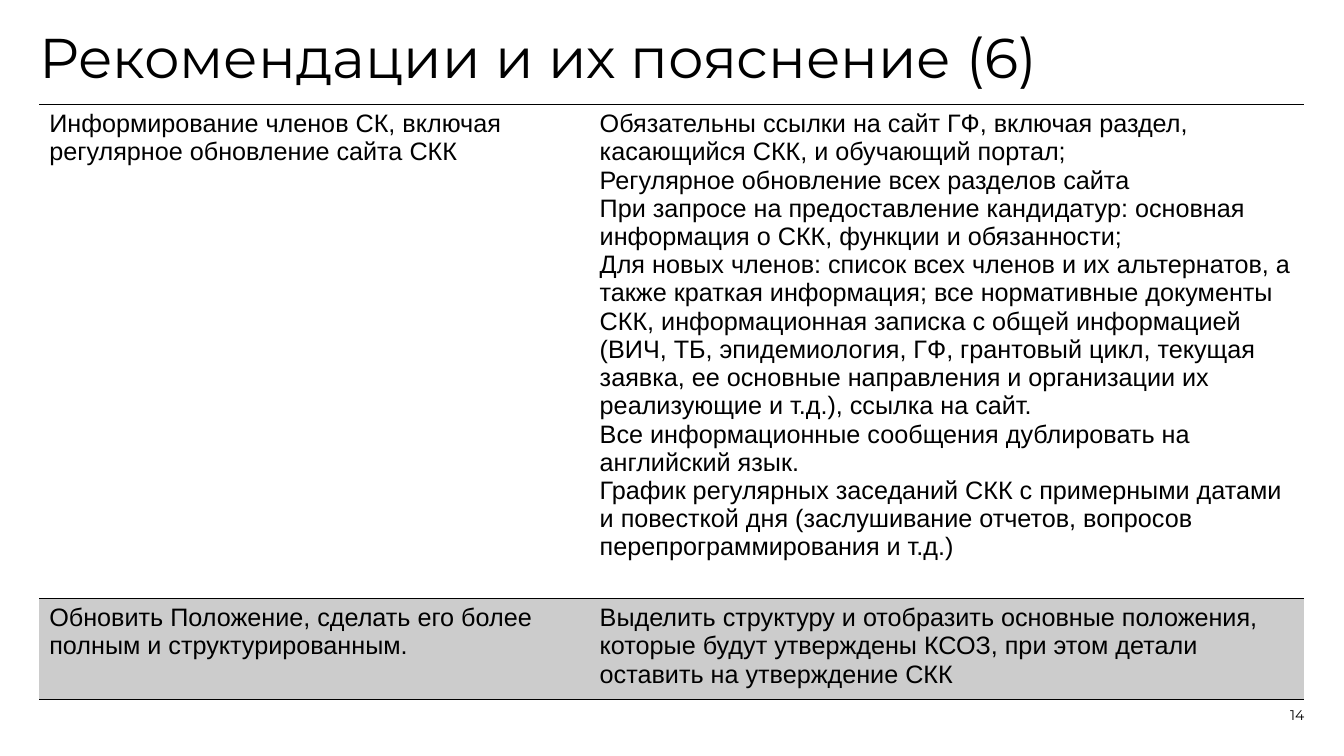
from pptx import Presentation
from pptx.dml.color import RGBColor
from pptx.enum.text import MSO_ANCHOR as Anchor, PP_ALIGN as Align
from pptx.oxml import parse_xml
from pptx.oxml.ns import nsdecls
from pptx.util import Cm, Pt

COLORS = {"text": "000000", "rule": "000000", "plain": "FFFFFF", "shaded": "CCCCCC"}
TITLE = {"name": "Montserrat", "size": Pt(40)}
NUMBER = {"name": "Montserrat", "size": Pt(10)}
BODY = {"name": "Arial", "size": Pt(18)}
LEFT, WIDTH = 0.99, 31.88


def write(frame, lines, font_format, align=Align.LEFT, spacing=1.0):
    frame.word_wrap = True
    for index, line in enumerate(lines):
        para = frame.paragraphs[0] if index == 0 else frame.add_paragraph()
        para.alignment = align
        para.line_spacing = spacing
        span = para.add_run()
        span.text = line
        for name, value in font_format.items():
            setattr(span.font, name, value)
        span.font.color.rgb = RGBColor.from_string(COLORS["text"])


deck = Presentation()
deck.slide_width, deck.slide_height = Cm(33.87), Cm(19.05)
page = deck.slides.add_slide(deck.slide_layouts[6])

labels = [
    (LEFT, 0.76, WIDTH, 1.88, "Рекомендации и их пояснение (6)", TITLE, Align.LEFT, 0.9, Anchor.TOP),
    (30.38, 17.22, 2.49, 1.02, "14", NUMBER, Align.RIGHT, 1.0, Anchor.BOTTOM),
]
for left, top, width, height, text, font_format, align, spacing, anchor in labels:
    box = page.shapes.add_textbox(Cm(left), Cm(top), Cm(width), Cm(height))
    frame = box.text_frame
    for side in ("left", "top", "right", "bottom"):
        setattr(frame, f"margin_{side}", 0)
    frame.vertical_anchor = anchor
    write(frame, [text], font_format, align, spacing)

recommendations = [
    (11.63, "plain", [
        ["Информирование членов СК, включая регулярное обновление сайта СКК"],
        [
            "Обязательны ссылки на сайт ГФ, включая раздел, касающийся СКК, и обучающий портал;",
            "Регулярное обновление всех разделов сайта",
            "При запросе на предоставление кандидатур: основная информация о СКК, функции и обязанности;",
            "Для новых членов: список всех членов и их альтернатов, а также краткая информация; "
            "все нормативные документы СКК, информационная записка с общей информацией "
            "(ВИЧ, ТБ, эпидемиология, ГФ, грантовый цикл, текущая заявка, ее основные направления "
            "и организации их реализующие и т.д.), ссылка на сайт.",
            "Все информационные сообщения дублировать на английский язык.",
            "График регулярных заседаний СКК с примерными датами и повесткой дня "
            "(заслушивание отчетов, вопросов перепрограммирования и т.д.)",
        ],
    ]),
    (2.39, "shaded", [
        ["Обновить Положение, сделать его более полным и структурированным."],
        [
            "Выделить структуру и отобразить основные положения, которые будут утверждены КСОЗ, "
            "при этом детали оставить на утверждение СКК",
        ],
    ]),
]
table_height = sum(height for height, _, _ in recommendations)
table = page.shapes.add_table(
    len(recommendations), 2, Cm(LEFT), Cm(2.64), Cm(WIDTH), Cm(table_height)
).table
table.first_row = table.horz_banding = False
for column, width in zip(table.columns, (13.87, 18.01)):
    column.width = Cm(width)

borders = {
    "L": "<a:noFill/>",
    "R": "<a:noFill/>",
    "T": f'<a:solidFill><a:srgbClr val="{COLORS["rule"]}"/></a:solidFill>',
    "B": f'<a:solidFill><a:srgbClr val="{COLORS["rule"]}"/></a:solidFill>',
}
for row, (height, fill, texts) in zip(table.rows, recommendations):
    row.height = Cm(height)
    for cell, lines in zip(row.cells, texts):
        properties = cell._tc.get_or_add_tcPr()
        for side, paint in borders.items():
            properties.append(parse_xml(
                f'<a:ln{side} {nsdecls("a")} w="{Pt(1)}">{paint}</a:ln{side}>'
            ))
        cell.fill.solid()
        cell.fill.fore_color.rgb = RGBColor.from_string(COLORS[fill])
        write(cell.text_frame, lines, BODY)

deck.save("out.pptx")
